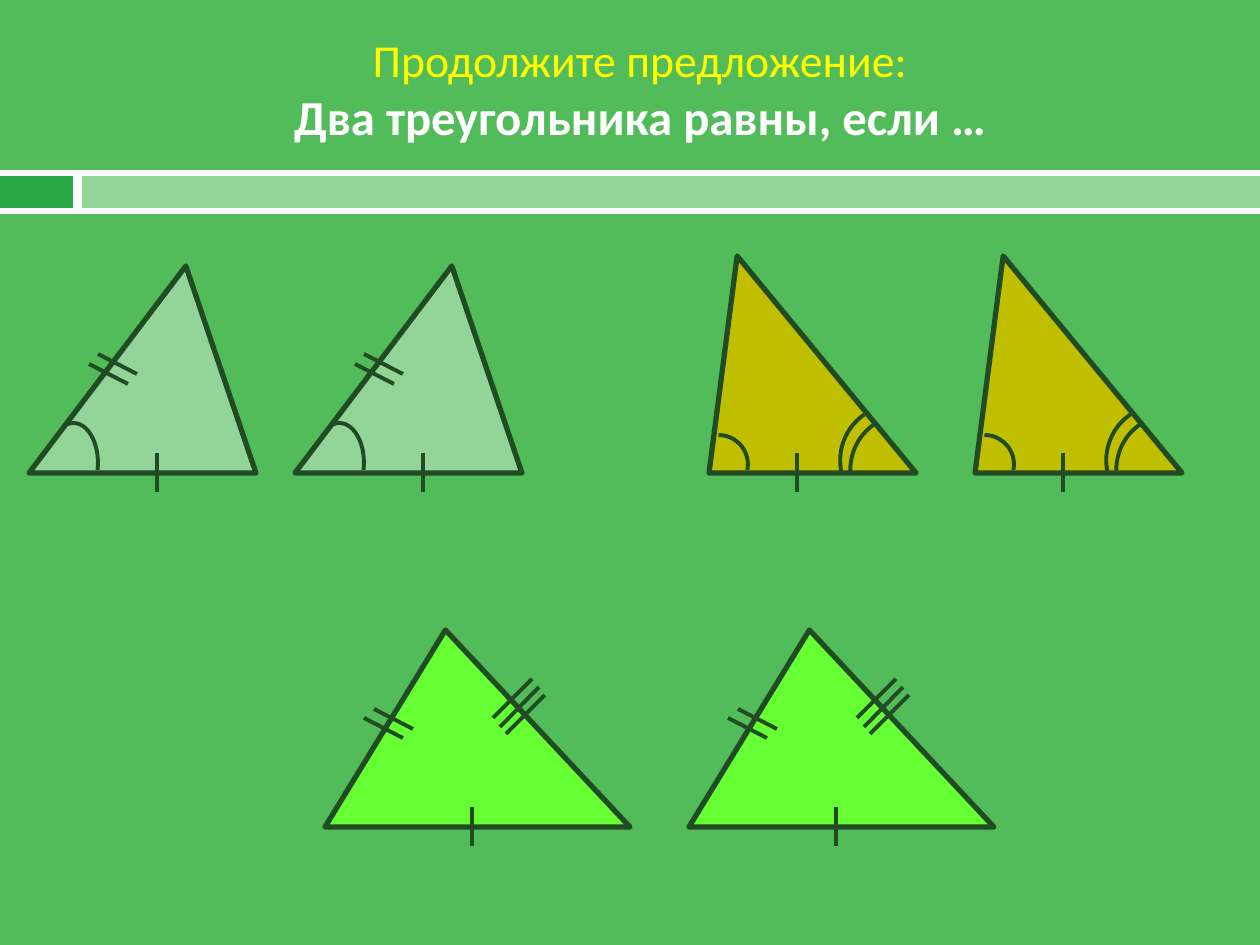
import pptx
import pptx.util
import pptx.dml.color
import pptx.enum.shapes
import pptx.enum.text
import pptx.oxml.ns
import lxml.etree

RGB = pptx.dml.color.RGBColor
SHAPE = pptx.enum.shapes.MSO_SHAPE
PX = 914400 / 126  # EMU per pixel

GREEN = RGB(0x52, 0xBC, 0x5A)
DARK_GREEN = RGB(0x29, 0xA7, 0x44)
PALE_GREEN = RGB(0x93, 0xD5, 0x98)
OUTLINE = RGB(0x21, 0x4B, 0x23)
OLIVE = RGB(0xBF, 0xBF, 0x00)
LIME = RGB(0x66, 0xFF, 0x33)
YELLOW = RGB(0xFF, 0xFF, 0x00)
WHITE = RGB(0xFF, 0xFF, 0xFF)


def emu(*px):
    return [round(v * PX) for v in px]


def add_shape(shapes, kind, box, fill=None, line_pt=None):
    sp = shapes.add_shape(kind, *emu(*box))
    sp.shadow.inherit = False
    if fill is None:
        sp.fill.background()
    else:
        sp.fill.solid()
        sp.fill.fore_color.rgb = fill
    if line_pt is None:
        sp.line.fill.background()
    else:
        sp.line.color.rgb = OUTLINE
        sp.line.width = pptx.util.Pt(line_pt)
    return sp


prs = pptx.Presentation()
prs.slide_width, prs.slide_height = emu(1260, 945)
s = prs.slides.add_slide(prs.slide_layouts[6])
s.background.fill.solid()
s.background.fill.fore_color.rgb = GREEN

# Band under the title
for box, color in [
    ((0, 170, 1260, 44), WHITE),
    ((0, 176, 73, 32), DARK_GREEN),
    ((82, 176, 1178, 32), PALE_GREEN),
]:
    add_shape(s.shapes, SHAPE.RECTANGLE, box, color)

# Title
tf = s.shapes.add_textbox(*emu(78, 31, 1124, 116)).text_frame
tf.word_wrap = True
tf.margin_top = tf.margin_bottom = 0
tf.vertical_anchor = pptx.enum.text.MSO_ANCHOR.MIDDLE
tf.text = "Продолжите предложение:\nДва треугольника равны, если …"
for p, size, color, bold in zip(tf.paragraphs, (26.1, 27.9), (YELLOW, WHITE), (False, True)):
    p.alignment = pptx.enum.text.PP_ALIGN.CENTER
    p.font.name = "Calibri"
    p.font.size = pptx.util.Pt(size)
    p.font.color.rgb = color
    p.font.bold = bold

# Pairs of equal triangles: box, apex, fill, step to the second triangle,
# tick marks (x1, y1, x2, y2), angle arcs (box, rotation, start, end)
pairs = [
    # Two sides and the angle between them
    ((29, 266, 227, 207), 0.691, PALE_GREEN, 266,
     [(157, 453, 157, 492), (98, 354, 137, 374), (89, 364, 128, 384)],
     [((49, 423, 49, 79), 0, 155.8, 10.2)]),
    # A side and the two angles next to it
    ((709, 256, 207, 217), 0.136, OLIVE, 266,
     [(797, 453, 797, 492)],
     [((689, 435, 59, 59), 0, 162, 6.35),
      ((838, 408, 107, 102), 286.2, 142.61, 187.51),
      ((848, 418, 107, 102), 281.4, 152.74, 192.07)]),
    # Three sides
    ((325, 630, 305, 197), 0.395, LIME, 364,
     [(532, 679, 493, 718), (539, 687, 500, 727), (545, 695, 506, 734),
      (374, 709, 413, 729), (364, 718, 403, 738), (472, 807, 472, 846)],
     []),
]
for (x, y, w, h), apex, fill, step, ticks, arcs in pairs:
    group = s.shapes.add_group_shape()
    for dx in (0, step):
        triangle = add_shape(group.shapes, SHAPE.ISOSCELES_TRIANGLE, (x + dx, y, w, h), fill, 3)
        triangle.adjustments[0] = apex
        for x1, y1, x2, y2 in ticks:
            tick = group.shapes.add_connector(
                pptx.enum.shapes.MSO_CONNECTOR.STRAIGHT, *emu(x1 + dx, y1, x2 + dx, y2))
            tick.line.color.rgb = OUTLINE
            tick.line.width = pptx.util.Pt(2.25)
            lxml.etree.SubElement(tick._element.spPr, pptx.oxml.ns.qn("a:effectLst"))
        for (ax, ay, aw, ah), rotation, start, end in arcs:
            arc = add_shape(group.shapes, SHAPE.ARC, (ax + dx, ay, aw, ah), line_pt=2.25)
            arc.rotation = rotation
            arc.adjustments[0] = start
            arc.adjustments[1] = end

prs.save("out.pptx")
